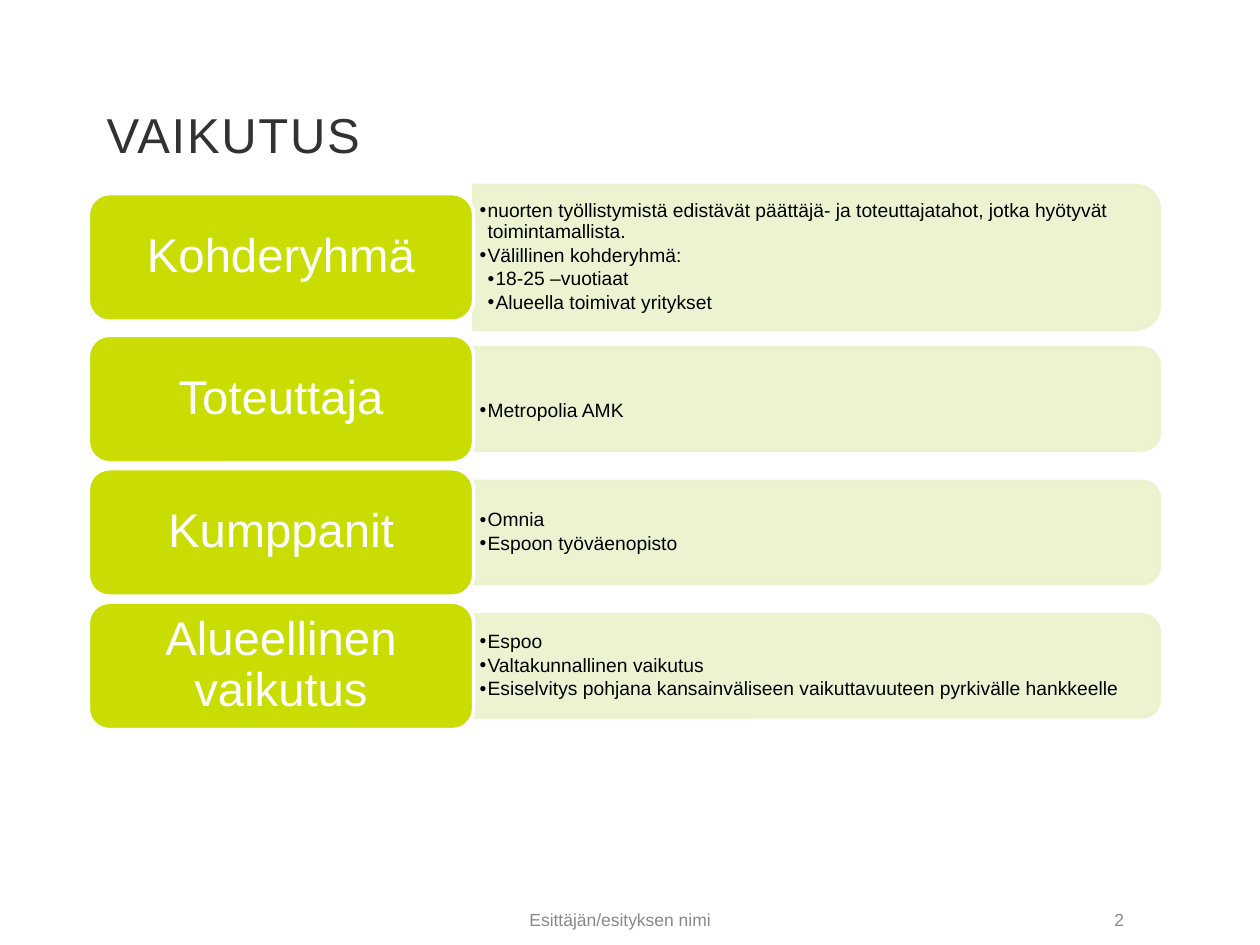
from lxml import etree
from pptx import Presentation
from pptx.dml.color import RGBColor
from pptx.enum import shapes, text
from pptx.oxml import ns
from pptx.util import Cm, Pt

TITLE = "VAIKUTUS"
FOOTER = "Esittäjän/esityksen nimi"
PAGE = "2"
# label, panel height (cm), extra space above the text (cm), (level, bullet text)
ROWS = [
    ("Kohderyhmä", 2.9, 0, [
        (1, "nuorten työllistymistä edistävät päättäjä- ja toteuttajatahot, "
            "jotka hyötyvät toimintamallista."),
        (1, "Välillinen kohderyhmä:"),
        (2, "18-25 –vuotiaat"),
        (2, "Alueella toimivat yritykset"),
    ]),
    ("Toteuttaja", 2.06, 0.5, [(1, "Metropolia AMK")]),
    ("Kumppanit", 2.06, 0, [(1, "Omnia"), (1, "Espoon työväenopisto")]),
    ("Alueellinen vaikutus", 2.06, 0, [
        (1, "Espoo"),
        (1, "Valtakunnallinen vaikutus"),
        (1, "Esiselvitys pohjana kansainväliseen vaikuttavuuteen "
            "pyrkivälle hankkeelle"),
    ]),
]

FONT = "Arial"
LIME = RGBColor(0xC9, 0xDD, 0x03)
PALE = RGBColor(0xEB, 0xF2, 0xCC)
WHITE = RGBColor(0xFF, 0xFF, 0xFF)
BLACK = RGBColor(0, 0, 0)
DARK = RGBColor(0x32, 0x32, 0x32)
GREY = RGBColor(0x87, 0x89, 0x89)

# Cm
ROWS_TOP, ROW_GAP = 3.74, 0.12
LABEL_LEFT, LABEL_WIDTH, LABEL_HEIGHT = 1.78, 7.77, 2.57
PANEL_LEFT, PANEL_WIDTH = LABEL_LEFT + LABEL_WIDTH, 13.82
BULLET_INDENT = 0.16
BULLET_SIZE = 11


def add_run(paragraph, words, size, color):
    run = paragraph.add_run()
    run.text = words
    run.font.name, run.font.size = FONT, Pt(size)
    run.font.color.rgb = color
    return run


def set_frame(frame, side, top, bottom, anchor=text.MSO_ANCHOR.MIDDLE):
    frame.word_wrap = True
    frame.vertical_anchor = anchor
    frame.margin_left = frame.margin_right = Cm(side)
    frame.margin_top, frame.margin_bottom = Cm(top), Cm(bottom)


def add_block(slide, kind, left, top, width, height, fill, line):
    block = slide.shapes.add_shape(kind, Cm(left), Cm(top), Cm(width), Cm(height))
    block.shadow.inherit = False
    block.fill.solid()
    block.fill.fore_color.rgb = fill
    block.line.color.rgb = line
    block.line.width = Pt(2)
    return block


def add_panel(slide, middle, height):
    """Pale panel, turned so that its two round corners face right."""
    center = PANEL_LEFT + PANEL_WIDTH / 2
    panel = add_block(slide, shapes.MSO_SHAPE.ROUND_2_SAME_RECTANGLE,
                      center - height / 2, middle - PANEL_WIDTH / 2,
                      height, PANEL_WIDTH, PALE, PALE)
    panel.rotation = 90
    for color in panel._element.spPr.iter(ns.qn("a:srgbClr")):
        etree.SubElement(color, ns.qn("a:alpha"), val="90000")


def add_bullets(slide, middle, height, space_above, bullets):
    box = slide.shapes.add_textbox(Cm(PANEL_LEFT), Cm(middle - height / 2),
                                   Cm(PANEL_WIDTH - 0.12), Cm(height))
    frame = box.text_frame
    set_frame(frame, 0.12, 0.05 + space_above, 0.05)
    for i, (level, words) in enumerate(bullets):
        paragraph = frame.add_paragraph() if i else frame.paragraphs[0]
        paragraph.level = level
        paragraph.line_spacing = 0.9
        paragraph.space_after = Pt(1.65)
        props = paragraph._p.get_or_add_pPr()
        props.set("marL", str(Cm(BULLET_INDENT * level)))
        props.set("indent", str(-Cm(BULLET_INDENT)))
        etree.SubElement(props, ns.qn("a:buFont"), typeface=FONT)
        etree.SubElement(props, ns.qn("a:buChar"), char="•")
        paragraph.font.size = Pt(BULLET_SIZE)
        add_run(paragraph, words, BULLET_SIZE, BLACK)
        end = etree.SubElement(paragraph._p, ns.qn("a:endParaRPr"))
        end.set("sz", str(BULLET_SIZE * 100))


def add_label(slide, middle, words):
    label = add_block(slide, shapes.MSO_SHAPE.ROUNDED_RECTANGLE, LABEL_LEFT,
                      middle - LABEL_HEIGHT / 2, LABEL_WIDTH, LABEL_HEIGHT, LIME, WHITE)
    set_frame(label.text_frame, 0.3, 0.15, 0.15)
    paragraph = label.text_frame.paragraphs[0]
    paragraph.alignment = text.PP_ALIGN.CENTER
    paragraph.line_spacing = 0.9
    add_run(paragraph, words, 27, WHITE)


def add_footer(slide, left, width, words, alignment):
    box = slide.shapes.add_textbox(Cm(left), Cm(18.19), Cm(width), Cm(0.86))
    set_frame(box.text_frame, 0.25, 0.13, 0.13, text.MSO_ANCHOR.TOP)
    paragraph = box.text_frame.paragraphs[0]
    paragraph.alignment = alignment
    add_run(paragraph, words, 10, GREY)


def main():
    deck = Presentation()
    deck.slide_width, deck.slide_height = Cm(25.4), Cm(19.05)
    slide = deck.slides.add_slide(deck.slide_layouts[5])

    title = slide.shapes.title
    title.left, title.top, title.width, title.height = Cm(1.9), Cm(1.96), Cm(21.6), Cm(1.47)
    set_frame(title.text_frame, 0.25, 0.13, 0.13)
    heading = title.text_frame.paragraphs[0]
    heading.alignment = text.PP_ALIGN.LEFT
    run = add_run(heading, TITLE, 28, DARK)
    run.font._element.set("spc", "100")

    top = ROWS_TOP
    for label, panel_height, space_above, bullets in ROWS:
        row_height = max(panel_height, LABEL_HEIGHT)
        middle = top + row_height / 2
        add_panel(slide, middle, panel_height)
        add_bullets(slide, middle, panel_height, space_above, bullets)
        add_label(slide, middle, label)
        top += row_height + ROW_GAP

    add_footer(slide, 6.35, 12.3, FOOTER, text.PP_ALIGN.CENTER)
    add_footer(slide, 18.85, 4.06, PAGE, text.PP_ALIGN.RIGHT)
    deck.save("out.pptx")


if __name__ == "__main__":
    main()
